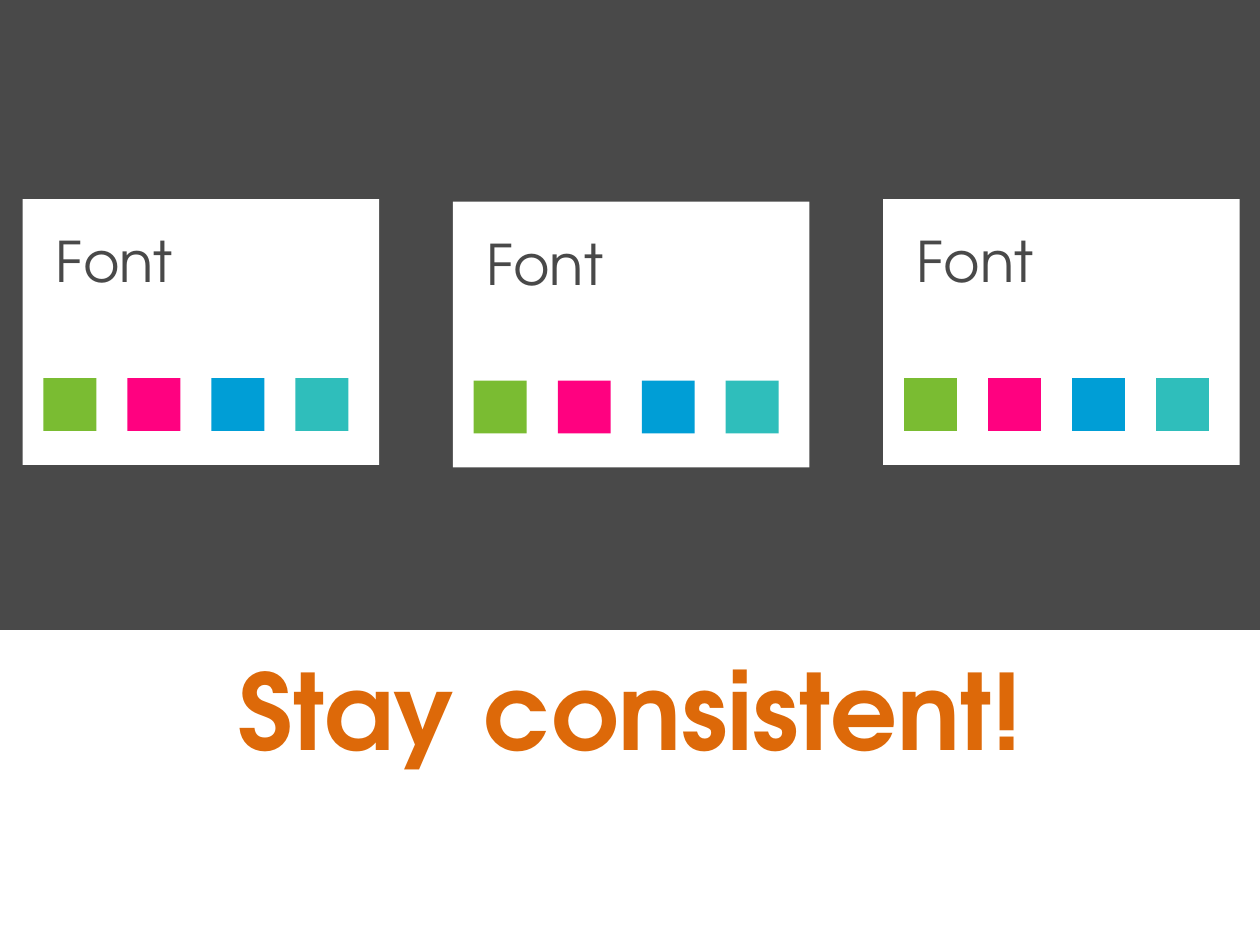
from pptx import Presentation
from pptx.dml.color import RGBColor
from pptx.enum.shapes import MSO_SHAPE
from pptx.enum.text import MSO_ANCHOR, MSO_AUTO_SIZE, PP_ALIGN
from pptx.util import Inches, Pt

FONT = "TeX Gyre Adventor"
GREY, WHITE, ORANGE = "494949", "FFFFFF", "DD6909"
SWATCHES = ["7ABC32", "FF0180", "009ED6", "2FBEBB"]
CARD_LEFT, CARD_STEP = 0.18, 3.415
CARD_TOPS = [1.58, 1.6, 1.58]
SWATCH_STEP = 2 / 3


def color(hex_value):
    return RGBColor.from_string(hex_value)


def add_rect(shapes, left, top, width, height, fill):
    sp = shapes.add_shape(MSO_SHAPE.RECTANGLE, Inches(left), Inches(top),
                          Inches(width), Inches(height))
    sp.shadow.inherit = False
    sp.fill.solid()
    sp.fill.fore_color.rgb = color(fill)
    sp.line.fill.background()
    return sp


def format_text(p, size, fill, bold=False):
    for r in p.runs:
        r.font.name = FONT
        r.font.size = Pt(size)
        r.font.bold = bold
        r.font.color.rgb = color(fill)


def set_title(s, text):
    title = s.shapes.title
    title.left, title.top = Inches(0.5), Inches(5)
    title.width, title.height = Inches(9), Inches(1.25)
    tf = title.text_frame
    tf.text = text
    tf.vertical_anchor = MSO_ANCHOR.MIDDLE
    p = tf.paragraphs[0]
    p.alignment = PP_ALIGN.CENTER
    format_text(p, 60, ORANGE, bold=True)


def add_label(shapes, text, left, top):
    box = shapes.add_textbox(Inches(left), Inches(top), Inches(2.58), Inches(0.64))
    tf = box.text_frame
    tf.word_wrap = True
    tf.auto_size = MSO_AUTO_SIZE.SHAPE_TO_FIT_TEXT
    tf.text = text
    format_text(tf.paragraphs[0], 32, GREY)


def add_card(s, left, top):
    shapes = s.shapes.add_group_shape().shapes
    add_rect(shapes, left, top, 2.83, 2.11, WHITE)
    inner = left + 0.165
    add_label(shapes, "Font", inner, top + 0.17)
    for i, fill in enumerate(SWATCHES):
        add_rect(shapes, inner + i * SWATCH_STEP, top + 1.42, 0.42, 0.42, fill)


def main():
    prs = Presentation()
    prs.slide_width, prs.slide_height = Inches(10), Inches(7.5)
    s = prs.slides.add_slide(prs.slide_layouts[5])

    # Dark band and title below it
    add_rect(s.shapes, 0, 0, 10, 5, GREY)
    set_title(s, "Stay consistent!")

    # Three matching sample cards
    for i, top in enumerate(CARD_TOPS):
        add_card(s, CARD_LEFT + i * CARD_STEP, top)

    prs.save("out.pptx")


if __name__ == "__main__":
    main()
